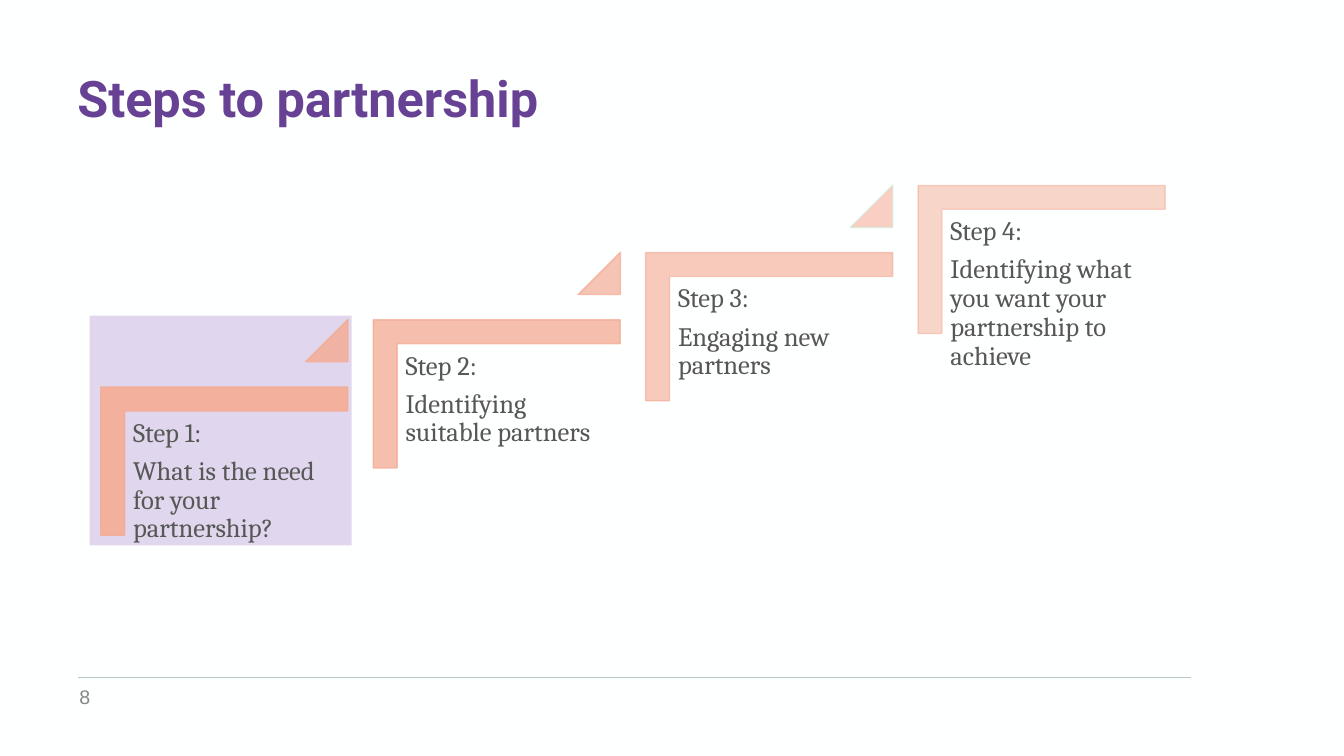
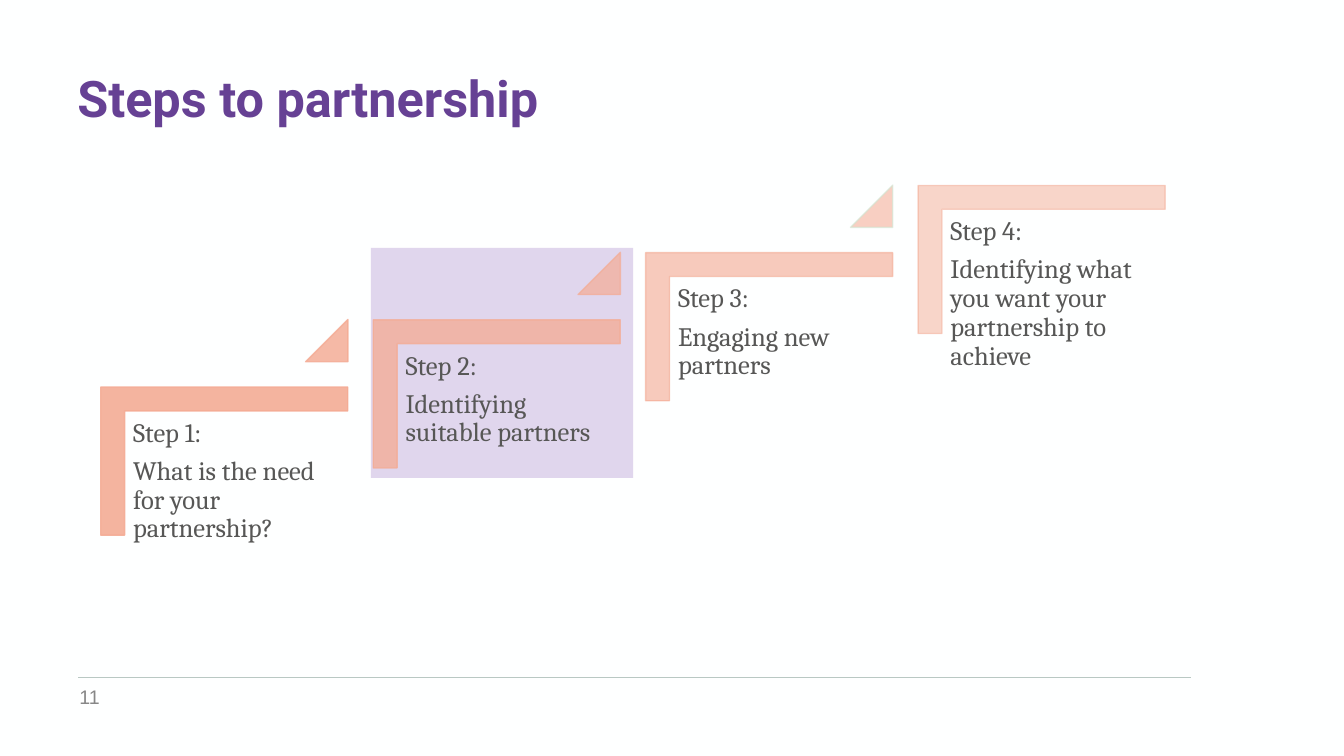
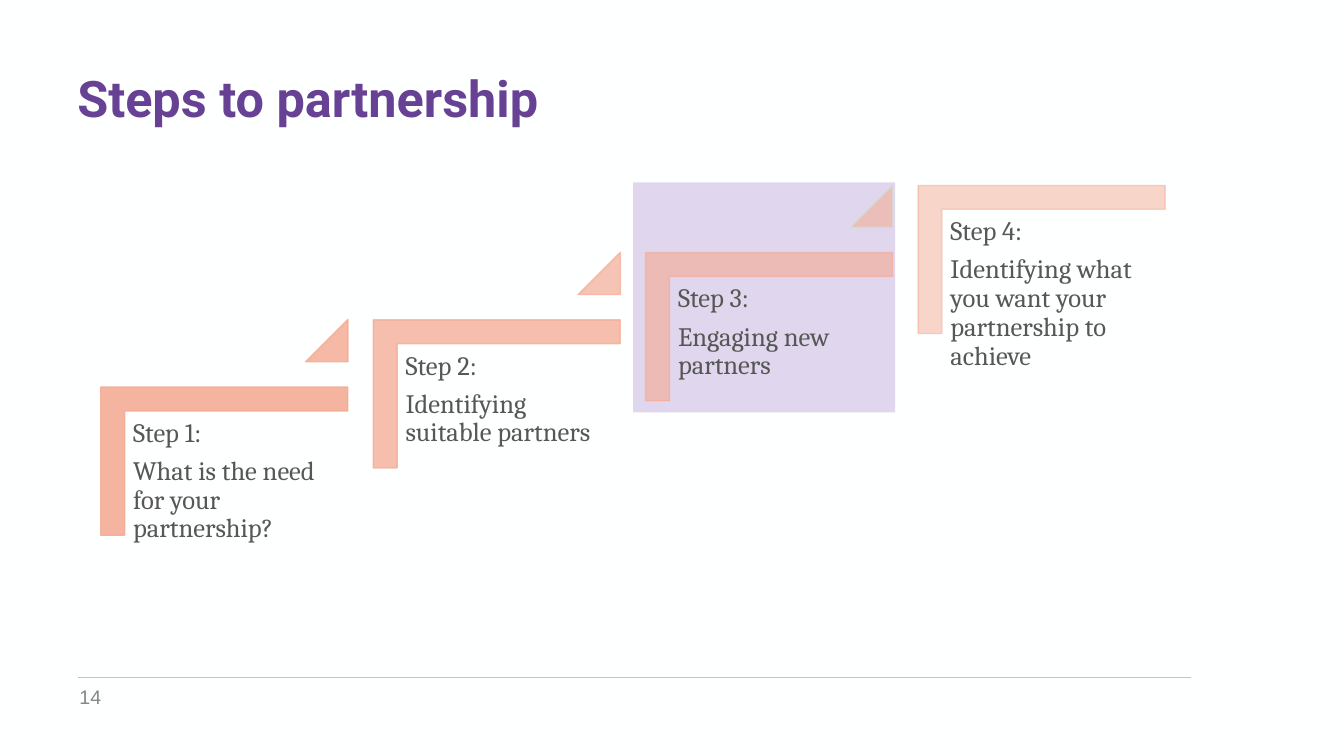
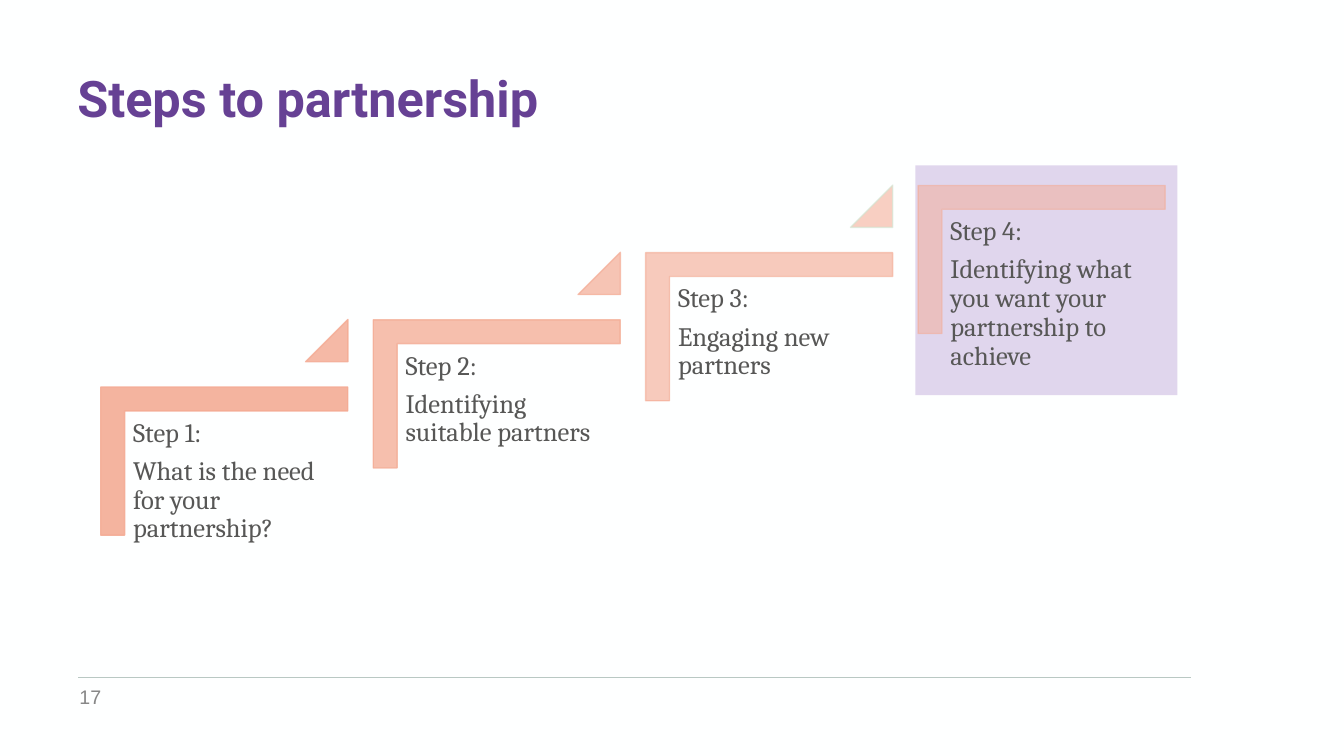
from lxml import etree
from pptx import Presentation
from pptx.dml.color import RGBColor
from pptx.enum.shapes import MSO_CONNECTOR, MSO_SHAPE
from pptx.enum.text import MSO_ANCHOR
from pptx.oxml.ns import qn
from pptx.util import Pt

STRAIGHT = MSO_CONNECTOR.STRAIGHT
RECTANGLE = MSO_SHAPE.RECTANGLE
CORNER = MSO_SHAPE.CORNER
TRIANGLE = MSO_SHAPE.ISOSCELES_TRIANGLE
MIDDLE = MSO_ANCHOR.MIDDLE
hex_color = RGBColor.from_string

BACKGROUND = "FEFFFF"
PURPLE = "664194"
LILAC = "E0D6ED"
CORAL = "F4AC95"
MINT = "CCE5D0"
RULE = "B9C8C3"
TEXT_GREY = "575756"
NUMBER_GREY = "878787"

STEPS = [
    "What is the need for your partnership?",
    "Identifying suitable partners",
    "Engaging new partners",
    "Identifying what you want your partnership to achieve",
]
STEP_LEFT, STEP_TOP = 89.3, 293.8
STEP_PITCH, STEP_RISE = 194.6, 48

# Page number, then left and top of the highlight
PAGES = [(8, 64.1, 225.4), (11, 265, 177.1), (14, 452.2, 130.3), (17, 653.8, 118.1)]


def add_step_shape(page, kind, left, top, width, height, line, opacity):
    """Add a coral shape whose fill and outline share one opacity in percent."""
    shape = page.shapes.add_shape(kind, Pt(left), Pt(top), Pt(width), Pt(height))
    shape.shadow.inherit = False
    shape.fill.solid()
    shape.fill.fore_color.rgb = hex_color(CORAL)
    shape.line.color.rgb = hex_color(line)
    shape.line.width = Pt(1)
    for color in shape.element.spPr.iter(qn("a:srgbClr")):
        etree.SubElement(color, qn("a:alpha"), val=str(opacity * 1000))
    return shape


def add_text(page, left, top, width, height, lines, font, size, color, bold=False):
    box = page.shapes.add_textbox(Pt(left), Pt(top), Pt(width), Pt(height))
    frame = box.text_frame
    frame.word_wrap = True
    for index, line in enumerate(lines):
        para = frame.paragraphs[0] if index == 0 else frame.add_paragraph()
        para.line_spacing = 0.9
        span = para.add_run()
        span.text = line
        span.font.name = font
        span.font.size = Pt(size)
        span.font.bold = bold
        span.font.color.rgb = hex_color(color)
    return frame


deck = Presentation()
deck.slide_width, deck.slide_height = Pt(960), Pt(540)
master_fill = deck.slide_master.background.fill
master_fill.solid()
master_fill.fore_color.rgb = hex_color(BACKGROUND)

for number, highlight_left, highlight_top in PAGES:
    page = deck.slides.add_slide(deck.slide_layouts[6])

    rule = page.shapes.add_connector(STRAIGHT, Pt(56), Pt(483.8), Pt(850.5), Pt(483.8))
    rule.line.color.rgb = hex_color(RULE)
    rule.line.width = Pt(0.5)
    etree.SubElement(rule._element.spPr, qn("a:effectLst"))

    highlight = page.shapes.add_shape(
        RECTANGLE, Pt(highlight_left), Pt(highlight_top), Pt(187.2), Pt(164.2))
    highlight.shadow.inherit = False
    highlight.fill.solid()
    highlight.fill.fore_color.rgb = hex_color(LILAC)
    highlight.line.fill.background()

    add_text(page, 48.2, 49, 784, 32.4, ["Steps to partnership"],
             "Roboto", 36, PURPLE, bold=True)
    footer = add_text(page, 49.7, 483.1, 72.7, 28.8, [str(number)],
                      "Arial", 14, NUMBER_GREY)
    footer.vertical_anchor = MIDDLE
    footer.paragraphs[0].line_spacing = 1.0

    for index, step in enumerate(STEPS):
        left = STEP_LEFT + index * STEP_PITCH
        top = STEP_TOP - index * STEP_RISE
        corner = add_step_shape(page, CORNER, left + 18, top - 52.6, 105.8, 176.4,
                                CORAL, round(90 - index * 40 / 3))
        corner.rotation = 90
        corner.adjustments[0] = corner.adjustments[1] = 0.161

        frame = add_text(page, left, top, 159, 139.7, [f"Step {index + 1}:", step],
                         "Cambria", 19, TEXT_GREY)
        frame.margin_left = frame.margin_right = Pt(5.8)
        frame.margin_top = frame.margin_bottom = Pt(5.8)
        frame.paragraphs[0].space_after = Pt(6.65)

        if index < len(STEPS) - 1:
            outline = MINT if index == len(STEPS) - 2 else CORAL
            triangle = add_step_shape(page, TRIANGLE, left + 129, top - 65.6, 30.2, 30.2,
                                      outline, round(90 - (2 * index + 1) * 20 / 3))
            triangle.adjustments[0] = 1

deck.save("out.pptx")
